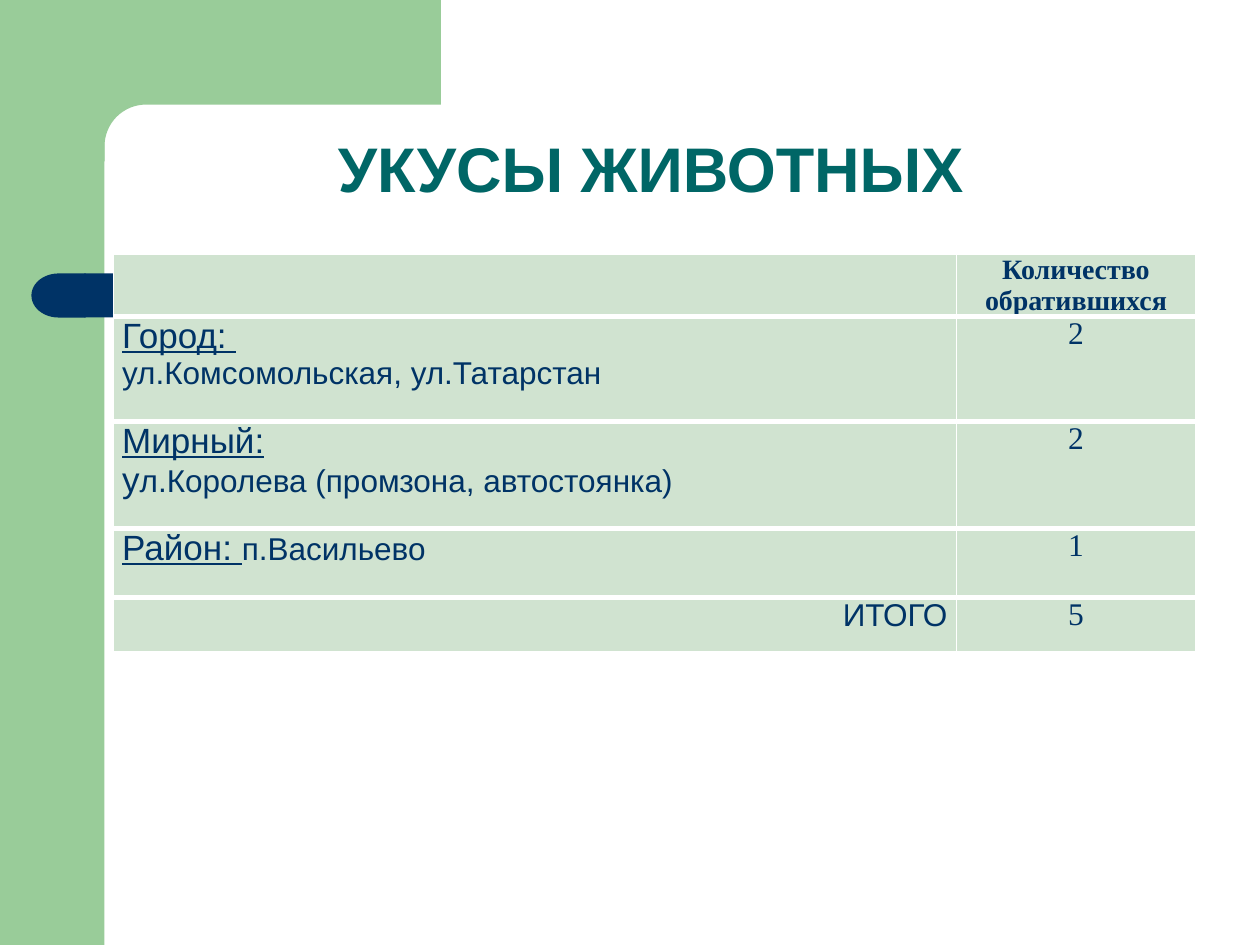
from math import cos, pi, sin
from lxml import etree
from pptx import Presentation
from pptx.dml.color import RGBColor
from pptx.enum.shapes import MSO_SHAPE
from pptx.enum.text import MSO_ANCHOR, PP_ALIGN
from pptx.oxml.ns import qn
from pptx.util import Inches, Pt

RECT, DELAY = MSO_SHAPE.RECTANGLE, MSO_SHAPE.FLOWCHART_DELAY
LEFT, CENTER, RIGHT = PP_ALIGN.LEFT, PP_ALIGN.CENTER, PP_ALIGN.RIGHT
BOTTOM = MSO_ANCHOR.BOTTOM
COLORS = {"green": "99CC99", "navy": "003366", "teal": "006666",
          "cell": "D0E3D0", "white": "FFFFFF"}
SANS, SERIF = "Arial", "Times New Roman"
TITLE = {"name": SANS, "size": Pt(36), "bold": True}
HEAD = {"name": SERIF, "size": Pt(16), "bold": True}
PLACE = {"name": SANS, "size": Pt(20), "bold": False, "underline": True}
INITIAL = {"name": SANS, "size": Pt(20), "bold": False}
STREET = {"name": SANS, "size": Pt(18), "bold": False}
COUNT = {"name": SERIF, "size": Pt(18), "bold": False}

COLUMNS = [6.69, 1.9]
ROW_HEIGHTS = [0.49, 0.83, 0.85, 0.55, 0.44]
ROWS = [
    [(LEFT, []), (CENTER, [[("Количество обратившихся", HEAD)]])],
    [(LEFT, [[("Город: ", PLACE)],
             [("ул.Комсомольская, ул.Татарстан", STREET)]]),
     (CENTER, [[("2", COUNT)]])],
    [(LEFT, [[("Мирный:", PLACE)],
             [("у", INITIAL), ("л.Королева (промзона, автостоянка)", STREET)]]),
     (CENTER, [[("2", COUNT)]])],
    [(LEFT, [[("Район: ", PLACE), ("п.Васильево", STREET)]]),
     (CENTER, [[("1", COUNT)]])],
    [(RIGHT, [[("ИТОГО", STREET)]]), (CENTER, [[("5", COUNT)]])],
]


def rgb(name):
    return RGBColor.from_string(COLORS[name])


def add_run(p, text, fmt, color):
    r = p.add_run()
    r.text = text
    for key, value in fmt.items():
        setattr(r.font, key, value)
    r.font.color.rgb = rgb(color)


def paint(sp, color):
    sp.shadow.inherit = False
    sp.fill.solid()
    sp.fill.fore_color.rgb = rgb(color)
    sp.line.fill.background()


def add_block(s, kind, box, color):
    sp = s.shapes.add_shape(kind, *map(Inches, box))
    paint(sp, color)
    return sp


def add_frame(s, x, y, w, h):
    side, top, radius = 0.83, 0.83, 0.33
    add_block(s, RECT, (x, y, side, h), "green")
    steps = 16
    angles = [pi / 2 * i / steps for i in range(steps + 1)]
    arc = [(x + side + radius * (1 - sin(a)), y + top + radius * (1 - cos(a)))
           for a in angles]
    points = [(x + 3.5, y), (x + 3.5, y + top), *arc,
              (x + side, y + 1.28), (x + 0.5, y + 1.28), (x + 0.5, y)]
    fb = s.shapes.build_freeform(*map(Inches, points[0]), scale=1.0)
    fb.add_line_segments([tuple(map(Inches, pt)) for pt in points[1:]], close=True)
    paint(fb.convert_to_shape(), "green")


def add_marker(s, x, y, w, h):
    cap = 0.43
    add_block(s, RECT, (x + cap - 0.01, y, w - cap + 0.01, h), "navy")
    sp = add_block(s, DELAY, (x, y, cap, h), "navy")
    sp._element.spPr.find(qn("a:xfrm")).set("flipH", "1")


def add_title(s, x, y, w, h):
    sp = s.shapes.title
    sp.left, sp.top, sp.width, sp.height = map(Inches, (x, y, w, h))
    tf = sp.text_frame
    tf.word_wrap = True
    tf.vertical_anchor = BOTTOM
    tf.margin_bottom = Inches(0.37)
    p = tf.paragraphs[0]
    p.alignment = CENTER
    p.line_spacing = 0.9
    add_run(p, "УКУСЫ ЖИВОТНЫХ", TITLE, "teal")


def set_borders(cell, widths):
    tc_pr = cell._tc.get_or_add_tcPr()
    for side, width in widths.items():
        ln = etree.SubElement(tc_pr, qn(f"a:ln{side}"), w=str(Pt(width)))
        fill = etree.SubElement(ln, qn("a:solidFill"))
        etree.SubElement(fill, qn("a:srgbClr"), val=COLORS["white"])


def fill_cell(cell, align, paragraphs, top_width):
    set_borders(cell, {"L": 1, "R": 1, "T": top_width, "B": 3})
    cell.fill.solid()
    cell.fill.fore_color.rgb = rgb("cell")
    cell.margin_left = cell.margin_right = Inches(0.07)
    cell.margin_top = cell.margin_bottom = 0
    tf = cell.text_frame
    for i, runs in enumerate(paragraphs):
        p = tf.add_paragraph() if i else tf.paragraphs[0]
        p.alignment = align
        for text, fmt in runs:
            add_run(p, text, fmt, "navy")


def add_bites_table(s, x, y, w, h):
    box = map(Inches, (x, y, w, h))
    table = s.shapes.add_table(len(ROWS), len(COLUMNS), *box).table
    for column, width in zip(table.columns, COLUMNS):
        column.width = Inches(width)
    for i, (row, height) in enumerate(zip(ROWS, ROW_HEIGHTS)):
        table.rows[i].height = Inches(height)
        for j, (align, paragraphs) in enumerate(row):
            fill_cell(table.cell(i, j), align, paragraphs, 3 if i else 1)


def main():
    prs = Presentation()
    prs.slide_width, prs.slide_height = Inches(10), Inches(7.5)
    s = prs.slides.add_slide(prs.slide_layouts[5])
    add_frame(s, 0, 0, 10, 7.5)
    add_marker(s, 0.25, 2.17, 8.09, 0.35)
    add_title(s, 0.83, 0.83, 8.67, 1.18)
    add_bites_table(s, 0.9, 2.02, sum(COLUMNS), sum(ROW_HEIGHTS))
    prs.save("out.pptx")


if __name__ == "__main__":
    main()
